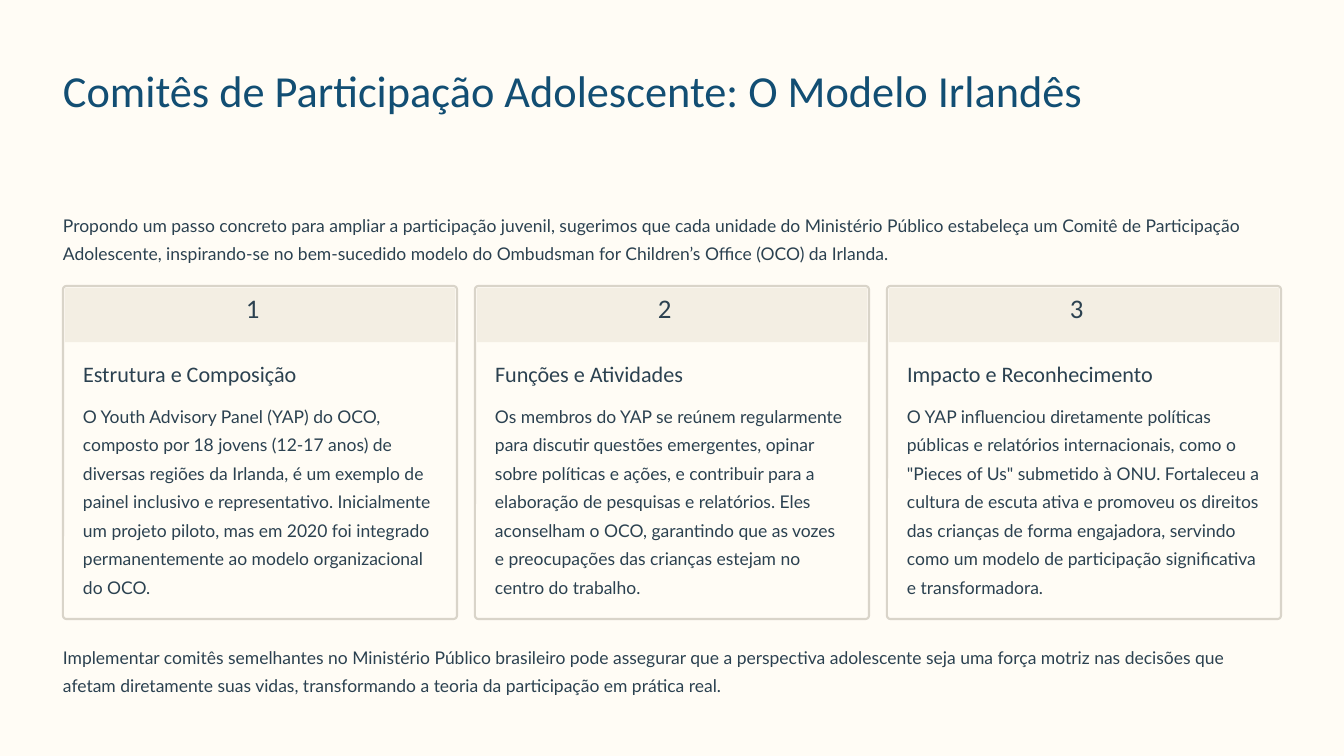
from dataclasses import dataclass

from pptx import Presentation
from pptx.dml.color import RGBColor
from pptx.enum.shapes import MSO_SHAPE as Shape
from pptx.enum.text import MSO_ANCHOR as Anchor, PP_ALIGN as Align
from pptx.util import Emu, Pt

PX_PER_INCH = 84


def px(length):
    return Emu(round(length * 914400 / PX_PER_INCH))


@dataclass(frozen=True)
class Theme:
    paper: str = "FFFCF5"
    band: str = "F3EEE3"
    border: str = "D9D4C9"
    title: str = "124E73"
    ink: str = "2B4150"
    heading_font: str = "Calibri"
    body_font: str = "Lato"
    title_size: int = 38
    number_size: int = 23
    heading_size: int = 19
    body_size: int = 15
    body_leading: float = 24.5


def write(frame, text, *, font, size, color, leading, wrap=True):
    frame.margin_left = frame.margin_top = 0
    frame.margin_right = frame.margin_bottom = 0
    frame.word_wrap = wrap
    frame.vertical_anchor = Anchor.TOP
    paragraph = frame.paragraphs[0]
    paragraph.alignment = Align.LEFT
    paragraph.line_spacing = Pt(leading)
    run = paragraph.add_run()
    run.text = text
    run.font.name = font
    run.font.size = Pt(size)
    run.font.color.rgb = RGBColor.from_string(color)


class Page:
    def __init__(self, slide, theme):
        self.slide = slide
        self.theme = theme
        backdrop = slide.background.fill
        backdrop.solid()
        backdrop.fore_color.rgb = RGBColor.from_string(theme.paper)

    def text(self, box, content, **style):
        area = self.slide.shapes.add_textbox(*map(px, box))
        write(area.text_frame, content, **style)

    def heading(self, box, content, size, leading, color=None, wrap=False):
        self.text(box, content, font=self.theme.heading_font, size=size,
                  color=color or self.theme.ink, leading=leading, wrap=wrap)

    def body(self, box, content):
        theme = self.theme
        self.text(box, content, font=theme.body_font, size=theme.body_size,
                  color=theme.ink, leading=theme.body_leading)

    def panel(self, box, fill, rounding, border=None):
        panel = self.slide.shapes.add_shape(Shape.ROUNDED_RECTANGLE, *map(px, box))
        panel.adjustments[0] = rounding
        panel.shadow.inherit = False
        panel.fill.solid()
        panel.fill.fore_color.rgb = RGBColor.from_string(fill)
        if border:
            panel.line.color.rgb = RGBColor.from_string(border)
            panel.line.width = Pt(1.8)
        else:
            panel.line.fill.background()

    def card(self, left, top, number, heading, details):
        theme = self.theme
        self.panel((left, top, 394, 333), theme.paper, 0.01, theme.border)
        self.panel((left + 2, top + 2, 390, 54), theme.band, 0)
        self.heading((left + 183, top + 11, 27, 34), str(number),
                     theme.number_size, 23)
        self.heading((left + 20, top + 73, 300, 28), heading,
                     theme.heading_size, 24)
        self.body((left + 20, top + 112, 354, 201), details)


CARDS = [
    ("Estrutura e Composição",
     "O Youth Advisory Panel (YAP) do OCO, composto por 18 jovens (12-17 anos) "
     "de diversas regiões da Irlanda, é um exemplo de painel inclusivo e "
     "representativo. Inicialmente um projeto piloto, mas em 2020 foi integrado "
     "permanentemente ao modelo organizacional do OCO."),
    ("Funções e Atividades",
     "Os membros do YAP se reúnem regularmente para discutir questões emergentes, "
     "opinar sobre políticas e ações, e contribuir para a elaboração de pesquisas "
     "e relatórios. Eles aconselham o OCO, garantindo que as vozes e preocupações "
     "das crianças estejam no centro do trabalho."),
    ("Impacto e Reconhecimento",
     "O YAP influenciou diretamente políticas públicas e relatórios "
     'internacionais, como o "Pieces of Us" submetido à ONU. Fortaleceu a cultura '
     "de escuta ativa e promoveu os direitos das crianças de forma engajadora, "
     "servindo como um modelo de participação significativa e transformadora."),
]


def main():
    deck = Presentation()
    deck.slide_width, deck.slide_height = px(1344), px(756)
    theme = Theme()
    page = Page(deck.slides.add_slide(deck.slide_layouts[6]), theme)
    margin, width = 63, 1218

    # Title and introduction
    page.heading((margin, 60, width, 113),
                 "Comitês de Participação Adolescente: O Modelo Irlandês",
                 theme.title_size, 48, theme.title, wrap=True)
    page.body((margin, 207, width, 57),
              "Propondo um passo concreto para ampliar a participação juvenil, "
              "sugerimos que cada unidade do Ministério Público estabeleça um "
              "Comitê de Participação Adolescente, inspirando-se no bem-sucedido "
              "modelo do Ombudsman for Children’s Office (OCO) da Irlanda.")

    # Numbered cards
    for index, (heading, details) in enumerate(CARDS):
        page.card(margin + 412 * index, 286, index + 1, heading, details)

    # Conclusion
    page.body((margin, 639, width, 57),
              "Implementar comitês semelhantes no Ministério Público brasileiro "
              "pode assegurar que a perspectiva adolescente seja uma força motriz "
              "nas decisões que afetam diretamente suas vidas, transformando a "
              "teoria da participação em prática real.")

    deck.save("out.pptx")


if __name__ == "__main__":
    main()
